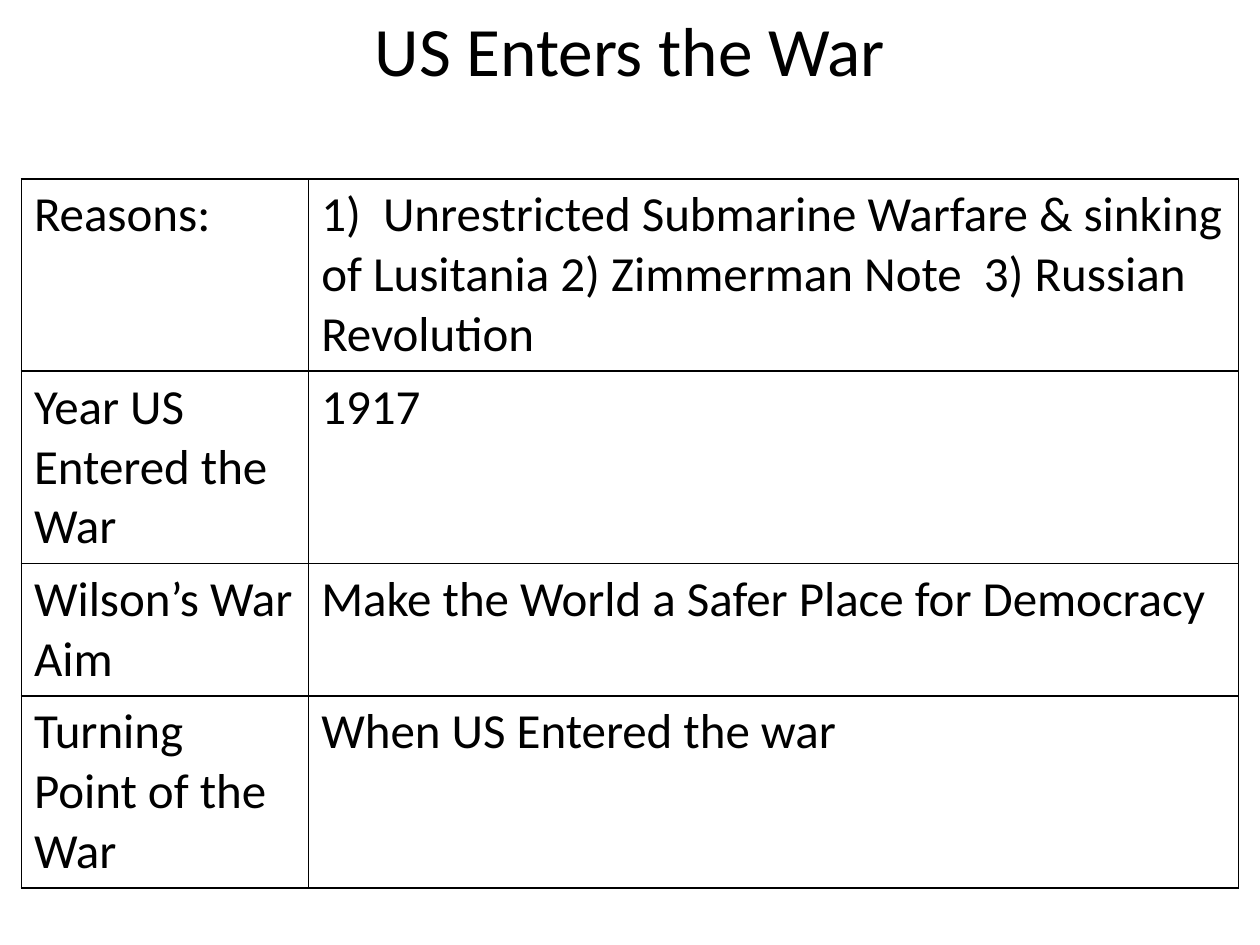
from typing import NamedTuple

from lxml.etree import SubElement
from pptx import Presentation
from pptx.dml.color import RGBColor
from pptx.enum.text import MSO_ANCHOR as Anchor, MSO_AUTO_SIZE as AutoSize, PP_ALIGN as Align
from pptx.oxml.ns import qn
from pptx.util import Inches, Pt

COLORS = {"text": "000000", "border": "000000", "background": "FFFFFF"}
FONT = "Calibri"
COLUMN_WIDTHS = (2.28, 7.38)
LINE_HEIGHT = 0.47
CELL_PADDING = 0.1


class Fact(NamedTuple):
    label: str
    answer: str
    lines: int


FACTS = [
    Fact("Reasons:", "1)  Unrestricted Submarine Warfare & sinking of Lusitania "
         "2) Zimmerman Note  3) Russian Revolution", 3),
    Fact("Year US Entered the War", "1917", 3),
    Fact("Wilson’s War Aim", "Make the World a Safer Place for Democracy", 2),
    Fact("Turning Point of the War", "When US Entered the war", 3),
]


def add_span(para, text: str, size: float) -> None:
    span = para.add_run()
    span.text = text
    span.font.name = FONT
    span.font.size = Pt(size)
    span.font.bold = False
    span.font.color.rgb = RGBColor.from_string(COLORS["text"])


def add_borders(cell) -> None:
    properties = cell._tc.get_or_add_tcPr()
    # Border lines must come before the cell fill
    for side in ("a:lnL", "a:lnR", "a:lnT", "a:lnB"):
        line = SubElement(properties, qn(side), w=str(Pt(1)))
        fill = SubElement(line, qn("a:solidFill"))
        SubElement(fill, qn("a:srgbClr"), val=COLORS["border"])


def fill_cell(cell, text: str) -> None:
    add_borders(cell)
    cell.fill.background()
    add_span(cell.text_frame.paragraphs[0], text, 28)


def add_title(page, text: str) -> None:
    title = page.shapes.title
    title.left, title.top = Inches(0.5), Inches(0.04)
    title.width, title.height = Inches(9), Inches(0.7)
    frame = title.text_frame
    frame.word_wrap = True
    frame.auto_size = AutoSize.NONE
    frame.vertical_anchor = Anchor.MIDDLE
    para = frame.paragraphs[0]
    para.alignment = Align.CENTER
    add_span(para, text, 39.6)


def add_fact_table(page, facts: list[Fact]) -> None:
    heights = [CELL_PADDING + LINE_HEIGHT * fact.lines for fact in facts]
    table = page.shapes.add_table(
        len(facts), len(COLUMN_WIDTHS), Inches(0.17), Inches(1.42),
        Inches(sum(COLUMN_WIDTHS)), Inches(sum(heights))).table
    table.first_row = table.horz_banding = False
    for column, width in zip(table.columns, COLUMN_WIDTHS):
        column.width = Inches(width)
    for row, height, fact in zip(table.rows, heights, facts):
        row.height = Inches(height)
        for cell, text in zip(row.cells, (fact.label, fact.answer)):
            fill_cell(cell, text)


def main() -> None:
    deck = Presentation()
    deck.slide_width, deck.slide_height = Inches(10), Inches(7.5)
    page = deck.slides.add_slide(deck.slide_layouts[5])
    background = page.background.fill
    background.solid()
    background.fore_color.rgb = RGBColor.from_string(COLORS["background"])

    add_title(page, "US Enters the War")
    add_fact_table(page, FACTS)
    deck.save("out.pptx")


if __name__ == "__main__":
    main()
